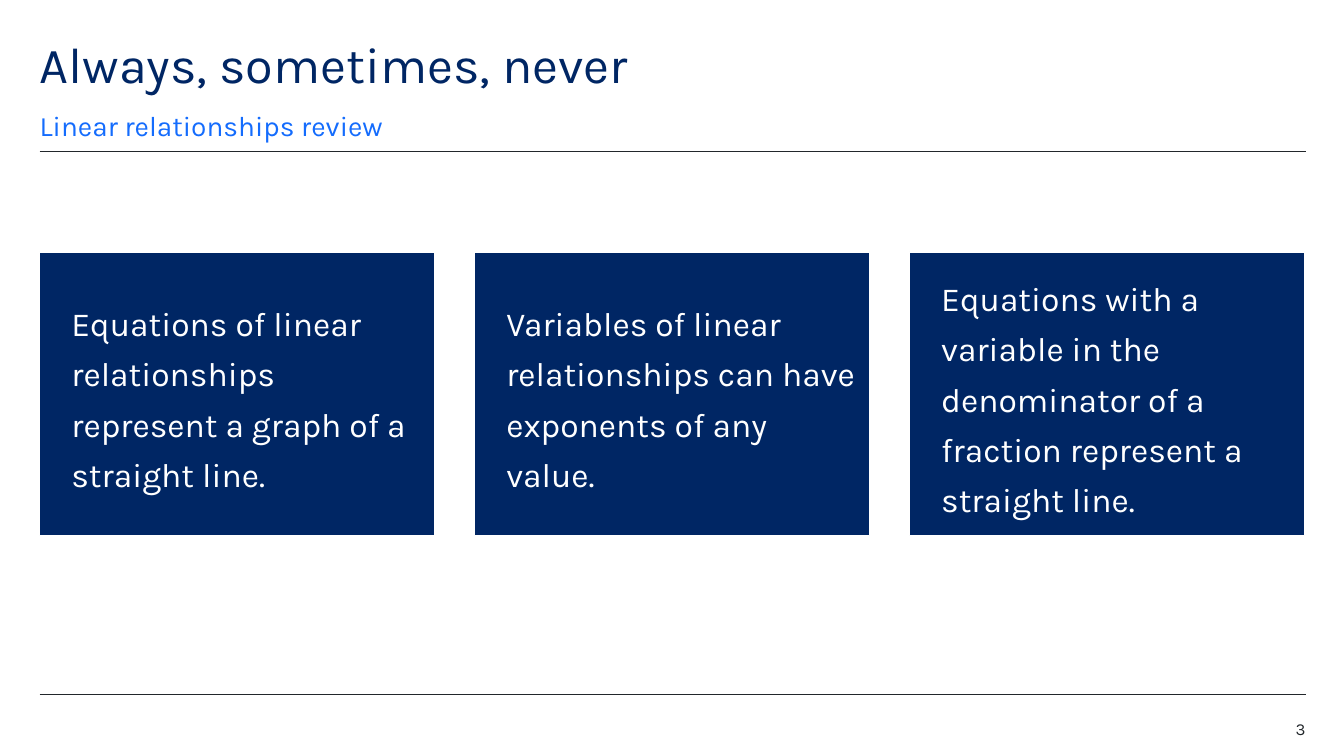
from dataclasses import dataclass

from lxml import etree
from pptx import Presentation
from pptx import util as u
from pptx.dml.color import RGBColor
from pptx.enum import shapes, text
from pptx.oxml.ns import qn


@dataclass(frozen=True)
class Theme:
    font: str = "Karla"
    navy: str = "002664"
    blue: str = "146CFD"
    ink: str = "22272B"
    white: str = "FFFFFF"
    title: int = 36
    card: int = 24
    subtitle: int = 20
    number: int = 12


class Deck:
    def __init__(self, theme):
        self.t = theme
        self.prs = Presentation()
        self.prs.slide_width, self.prs.slide_height = u.Cm(33.87), u.Cm(19.05)
        self.s = self.prs.slides.add_slide(self.prs.slide_layouts[6])

    def set_text(self, sp, words, size, color, inset=0, anchor=text.MSO_ANCHOR.TOP,
                 align=text.PP_ALIGN.LEFT, spacing=1.0, after=0, indent=0):
        tf = sp.text_frame
        tf.word_wrap = True
        tf.vertical_anchor = anchor
        tf.margin_left = tf.margin_right = u.Cm(inset)
        tf.margin_top = tf.margin_bottom = u.Cm(inset)
        p = tf.paragraphs[0]
        p.alignment, p.line_spacing, p.space_after = align, spacing, u.Pt(after)
        if indent:
            p._p.get_or_add_pPr().set("marL", str(u.Cm(indent)))
        r = p.add_run()
        r.text = words
        r.font.name, r.font.size = self.t.font, u.Pt(size)
        r.font.color.rgb = RGBColor.from_string(color)

    def label(self, x, y, w, h, words, size, color, **style):
        sp = self.s.shapes.add_textbox(u.Cm(x), u.Cm(y), u.Cm(w), u.Cm(h))
        self.set_text(sp, words, size, color, **style)

    def rule(self, x1, x2, y):
        sp = self.s.shapes.add_connector(
            shapes.MSO_CONNECTOR.STRAIGHT, u.Cm(x1), u.Cm(y), u.Cm(x2), u.Cm(y))
        sp.line.color.rgb = RGBColor.from_string(self.t.ink)
        sp.line.width = u.Pt(0.5)
        etree.SubElement(sp._element.spPr, qn("a:effectLst"))

    def card(self, x, y, w, h, words):
        sp = self.s.shapes.add_shape(
            shapes.MSO_SHAPE.RECTANGLE, u.Cm(x), u.Cm(y), u.Cm(w), u.Cm(h))
        sp.shadow.inherit = False
        sp.fill.solid()
        sp.fill.fore_color.rgb = RGBColor.from_string(self.t.navy)
        sp.line.color.rgb = RGBColor.from_string(self.t.white)
        sp.line.width = u.Pt(1)
        self.set_text(sp, words, self.t.card, self.t.white, inset=0.3, indent=0.5,
                      anchor=text.MSO_ANCHOR.MIDDLE, spacing=1.25, after=8.4)


def main():
    t = Theme()
    deck = Deck(t)
    left, right = 1, 32.9

    # Header and footer rules
    for y in (3.81, 17.5):
        deck.rule(left, right, y)

    # Title and subtitle
    deck.label(left, 1, 28, 1.52, "Always, sometimes, never", t.title, t.navy,
               spacing=0.9)
    deck.label(left, 2.72, 28, 0.86, "Linear relationships review", t.subtitle, t.blue,
               anchor=text.MSO_ANCHOR.BOTTOM, spacing=1.5, after=12)

    # Statement cards
    statements = (
        "Equations of linear relationships represent a graph of a straight line.",
        "Variables of linear relationships can have exponents of any value.",
        "Equations with a variable in the denominator of a fraction represent "
        "a straight line.",
    )
    width, gap = 9.96, 1
    for i, words in enumerate(statements):
        deck.card(left + i * (width + gap), 6.35, width, 7.14, words)

    # Slide number
    deck.label(right - 2, 18.1, 2, 0.5, "3", t.number, t.ink,
               align=text.PP_ALIGN.RIGHT)

    deck.prs.save("out.pptx")


if __name__ == "__main__":
    main()
